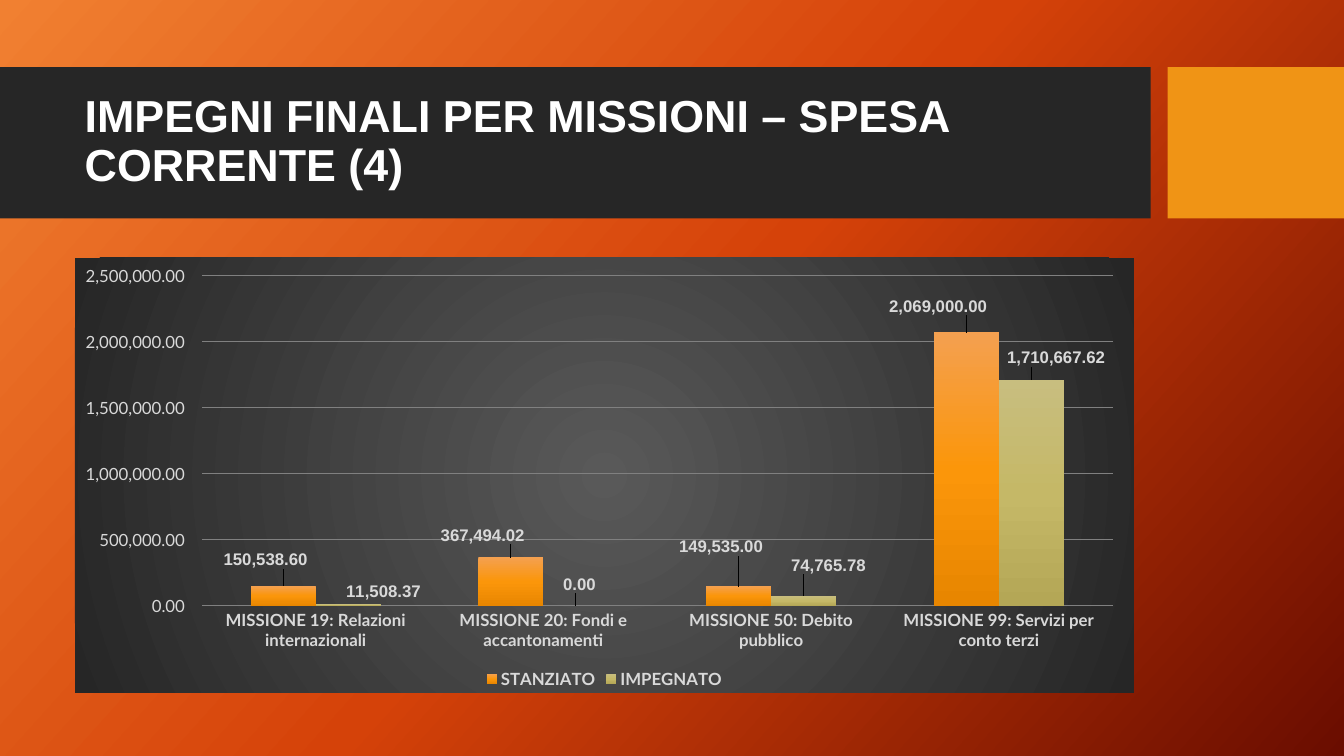
from copy import deepcopy
from dataclasses import dataclass

from pptx import Presentation, oxml
from pptx import util as u
from pptx.chart import data
from pptx.dml import color
from pptx.enum import chart as ch
from pptx.enum import shapes, text
from pptx.oxml import ns

COLS, ROWS = 160, 90


@dataclass(frozen=True)
class Theme:
    dark: str = "262626"
    gold: str = "F09415"
    white: str = "FFFFFF"
    pale: str = "D9D9D9"
    grid: str = "808080"
    back: tuple = ("F18031", "D54209", "6A0D00")
    panel: tuple = ("595959", "262626")
    bars: tuple = (("F4A050", "FB960A", "E88600"), ("C8BE7F", "C5B867", "B4A756"))
    head: str = "Arial"
    body: str = "Lato"
    title: int = 32
    label: int = 12
    base: int = 10
    money: str = r"#,##0.00\ _€"


def blend(tones, angle=None):
    stops = "".join(
        f'<a:gs pos="{100000 * i // (len(tones) - 1)}"><a:srgbClr val="{tone}"/></a:gs>'
        for i, tone in enumerate(tones)
    )
    if angle is None:
        way = ('<a:path path="circle"><a:fillToRect l="50000" t="50000"'
               ' r="50000" b="50000"/></a:path>')
    else:
        way = f'<a:lin ang="{angle * 60000}" scaled="0"/>'
    return oxml.parse_xml(
        f'<a:gradFill {ns.nsdecls("a")} rotWithShape="1">'
        f"<a:gsLst>{stops}</a:gsLst>{way}</a:gradFill>"
    )


def regrade(fill, root, holder, tones, angle):
    fill.solid()
    old = root.find(f".//{ns.qn(holder)}/{ns.qn('a:solidFill')}")
    old.getparent().replace(old, blend(tones, angle))


def place(inner="", **parts):
    body = "".join(f'<c:{key} val="{val}"/>' for key, val in parts.items())
    return oxml.parse_xml(
        f'<c:layout {ns.nsdecls("c")}><c:manualLayout>{inner}{body}</c:manualLayout></c:layout>'
    )


class Deck:
    def __init__(self, theme):
        self.theme = theme
        self.prs = Presentation()
        self.prs.slide_width = u.Inches(COLS / 12)
        self.prs.slide_height = u.Inches(ROWS / 12)
        self.slide = self.prs.slides.add_slide(self.prs.slide_layouts[6])
        regrade(self.slide.background.fill, self.slide.element, "p:bgPr", theme.back, 42)

    def area(self, col, row, wide, high):
        across = self.prs.slide_width / COLS
        down = self.prs.slide_height / ROWS
        return [round(n) for n in (col * across, row * down, wide * across, high * down)]

    def style(self, font, size, tone, face, bold=False):
        font.size = u.Pt(size)
        font.color.rgb = color.RGBColor.from_string(tone)
        font.name = face
        font.bold = bold

    def block(self, area, tone):
        box = self.slide.shapes.add_shape(shapes.MSO_SHAPE.RECTANGLE, *self.area(*area))
        box.shadow.inherit = False
        box.fill.solid()
        box.fill.fore_color.rgb = color.RGBColor.from_string(tone)
        box.line.fill.background()

    def title(self, area, words):
        frame = self.slide.shapes.add_textbox(*self.area(*area)).text_frame
        frame.word_wrap = True
        frame.vertical_anchor = text.MSO_ANCHOR.MIDDLE
        frame.text = words
        para = frame.paragraphs[0]
        para.line_spacing = 0.9
        t = self.theme
        self.style(para.runs[0].font, t.title, t.white, t.head, True)

    def chart(self, area, cats, series, shifts):
        t = self.theme
        source = data.CategoryChartData(number_format=t.money)
        source.categories = cats
        for name, values in series:
            source.add_series(name, values)
        chart = self.slide.shapes.add_chart(
            ch.XL_CHART_TYPE.COLUMN_CLUSTERED, *self.area(*area), source
        ).chart
        chart.has_title = False
        self.style(chart.font, t.base, t.white, t.body)
        panel = oxml.parse_xml(f'<c:spPr {ns.nsdecls("c", "a")}><a:ln><a:noFill/></a:ln></c:spPr>')
        panel.insert(0, blend(t.panel))
        chart.element.find(ns.qn("c:txPr")).addprevious(panel)
        self.axes(chart)
        plot = chart.plots[0]
        plot.gap_width, plot.overlap, plot.vary_by_categories = 150, 0, False
        for ser, tones, moves in zip(plot.series, t.bars, shifts):
            ser.invert_if_negative = False
            regrade(ser.format.fill, ser.format.element if hasattr(ser.format, "element")
                    else ser._element, "c:spPr", tones, 90)
            self.labels(ser, moves)

    def axes(self, chart):
        t = self.theme
        for axis, bold in ((chart.category_axis, True), (chart.value_axis, False)):
            axis.major_tick_mark = axis.minor_tick_mark = ch.XL_TICK_MARK.NONE
            axis.format.line.fill.background()
            self.style(axis.tick_labels.font, t.label, t.pale, t.body, bold)
        axis = chart.value_axis
        axis.minimum_scale, axis.maximum_scale, axis.major_unit = 0, 2500000, 500000
        axis.tick_labels.number_format = t.money
        axis.tick_labels.number_format_is_linked = False
        line = axis.major_gridlines.format.line
        line.color.rgb = color.RGBColor.from_string(t.grid)
        line.width = u.Pt(0.75)
        chart.has_legend = True
        chart.legend.position = ch.XL_LEGEND_POSITION.BOTTOM
        chart.legend.include_in_layout = False
        self.style(chart.legend.font, t.label, t.pale, t.body, True)
        zone = chart.element.find(f".//{ns.qn('c:plotArea')}")
        for old in zone.findall(ns.qn("c:layout")):
            zone.remove(old)
        inner = '<c:layoutTarget val="inner"/><c:xMode val="edge"/><c:yMode val="edge"/>'
        zone.insert(0, place(inner, x=0.12, y=0.04, w=0.86, h=0.76))

    def labels(self, ser, moves):
        t = self.theme
        tags = ser.data_labels
        tags.show_value = True
        tags.number_format = t.money
        tags.number_format_is_linked = False
        tags.position = ch.XL_LABEL_POSITION.OUTSIDE_END
        self.style(tags.font, t.label, t.pale, t.head, True)
        for i, (x, y) in enumerate(moves):
            ser.points[i].data_label.position = ch.XL_LABEL_POSITION.OUTSIDE_END
        root = ser._element.find(ns.qn("c:dLbls"))
        looks = [root.find(ns.qn(tag)) for tag in ("c:numFmt", "c:txPr")]
        for tag, (x, y) in zip(root.findall(ns.qn("c:dLbl")), moves):
            for old in tag.findall(ns.qn("c:txPr")):
                tag.remove(old)
            parts = [place(x=x, y=y), *map(deepcopy, looks)]
            for spot, part in enumerate(parts, 1):
                tag.insert(spot, part)


def main():
    theme = Theme()
    deck = Deck(theme)
    deck.block((0, 8, 137, 18), theme.dark)
    deck.block((139, 8, 21, 18), theme.gold)
    deck.title((8.9, 9.84, 126.1, 14.2), "IMPEGNI FINALI PER MISSIONI – SPESA CORRENTE (4)")
    deck.chart(
        (8.9, 30.7, 126.1, 51.8),
        (
            "MISSIONE 19: Relazioni internazionali",
            "MISSIONE 20: Fondi e accantonamenti",
            "MISSIONE 50: Debito pubblico",
            "MISSIONE 99: Servizi per conto terzi",
        ),
        (
            ("STANZIATO", (150538.6, 367494.02, 149535, 2069000)),
            ("IMPEGNATO", (11508.37, 0, 74765.78, 1710667.62)),
        ),
        (
            ((-0.01, -0.03), (-0.02, -0.02), (-0.01, -0.06), (-0.02, -0.03)),
            ((0.04, 0), (0.01, -0.02), (0.03, -0.04), (0.03, -0.02)),
        ),
    )
    deck.prs.save("out.pptx")


if __name__ == "__main__":
    main()
